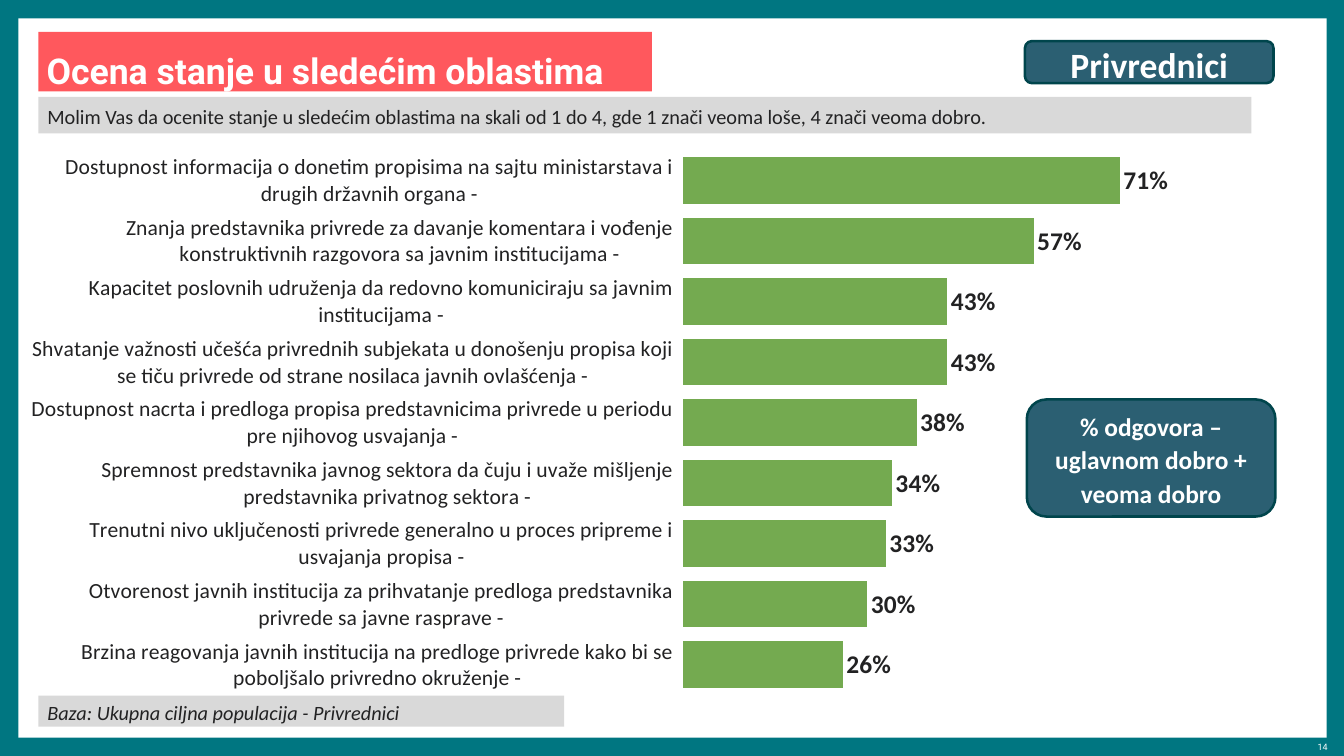
from dataclasses import dataclass

from lxml import etree
from pptx import Presentation
from pptx import util as u
from pptx.chart.data import CategoryChartData
from pptx.dml.color import RGBColor
from pptx.enum import chart as charts, shapes, text
from pptx.oxml.ns import qn


@dataclass(frozen=True)
class Theme:
    """Colours, fonts and type sizes of the slide."""
    teal: str = "007681"
    white: str = "FFFFFF"
    grey: str = "D9D9D9"
    coral: str = "FF585D"
    badge: str = "2B5F72"
    badge_line: str = "00454C"
    bar: str = "74AA50"
    ink: str = "222223"
    heading_font: str = "Roboto"
    body_font: str = "Calibri"
    heading: int = 28
    label: int = 20
    chart: int = 18
    category: int = 17
    note: int = 16
    number: int = 7


class SurveyPage:
    """Draws the elements of one survey slide."""

    def __init__(self, deck, theme):
        self.theme = theme
        self.page = deck.slides.add_slide(deck.slide_layouts[6])
        self.paint(self.page.background.fill, theme.teal)

    def paint(self, fill, colour):
        fill.solid()
        fill.fore_color.rgb = RGBColor.from_string(colour)

    def style(self, font, size, colour, name, bold=False, italic=False):
        font.size, font.name, font.bold, font.italic = u.Pt(size), name, bold, italic
        font.color.rgb = RGBColor.from_string(colour)

    def panel(self, place, colour, kind=shapes.MSO_SHAPE.RECTANGLE):
        box = self.page.shapes.add_shape(kind, *map(u.Pt, place))
        box.shadow.inherit = False
        self.paint(box.fill, colour)
        box.line.fill.background()
        return box

    def set_words(self, box, words, align, margins, spacing=1.1, gap=0):
        frame = box.text_frame
        frame.word_wrap = True
        frame.vertical_anchor = text.MSO_ANCHOR.MIDDLE
        frame.margin_left = frame.margin_right = u.Pt(margins[0])
        frame.margin_top, frame.margin_bottom = map(u.Pt, margins[1:])
        para = frame.paragraphs[0]
        para.text, para.alignment, para.line_spacing = words, align, spacing
        para.space_before = para.space_after = u.Pt(gap)
        return para.font

    def title(self, place, words):
        box = self.panel(place, self.theme.coral)
        font = self.set_words(box, words, text.PP_ALIGN.LEFT, (6.5, 5.8, 0), u.Pt(41))
        self.style(font, self.theme.heading, self.theme.white,
                   self.theme.heading_font, bold=True)

    def note(self, place, words, italic=False):
        box = self.panel(place, self.theme.grey)
        font = self.set_words(box, words, text.PP_ALIGN.LEFT, (7.2, 0, 0), gap=6)
        self.style(font, self.theme.note, self.theme.ink,
                   self.theme.body_font, italic=italic)

    def badge(self, place, words, size):
        box = self.panel(place, self.theme.badge, shapes.MSO_SHAPE.ROUNDED_RECTANGLE)
        self.paint(box.line.fill, self.theme.badge_line)
        box.line.width = u.Pt(2)
        font = self.set_words(box, words, text.PP_ALIGN.CENTER, (2.9, 2.9, 2.9))
        self.style(font, size, self.theme.white, self.theme.body_font, bold=True)

    def number(self, place, words):
        box = self.page.shapes.add_textbox(*map(u.Pt, place))
        font = self.set_words(box, words, text.PP_ALIGN.RIGHT, (0, 0, 0))
        self.style(font, self.theme.number, self.theme.white, self.theme.heading_font)

    def bars(self, place, scores, plot_place):
        theme = self.theme
        data = CategoryChartData()
        data.categories = list(scores)
        data.add_series("Series 1", list(scores.values()))
        chart = self.page.shapes.add_chart(
            charts.XL_CHART_TYPE.BAR_CLUSTERED, *map(u.Pt, place), data).chart
        chart.has_legend = chart.has_title = False
        self.style(chart.font, theme.chart, theme.ink, theme.heading_font)
        areas = chart.category_axis
        areas.format.line.fill.background()
        areas.has_major_gridlines = False
        self.style(areas.tick_labels.font, theme.category, theme.ink, theme.body_font)
        scale = chart.value_axis
        scale.minimum_scale, scale.maximum_scale, scale.major_unit = 0, 100, 10
        scale.has_major_gridlines = scale.visible = False
        plot = chart.plots[0]
        plot.gap_width, plot.overlap, plot.vary_by_categories = 30, 100, False
        self.paint(plot.series[0].format.fill, theme.bar)
        plot.has_data_labels = True
        labels = plot.data_labels
        labels.show_value = True
        labels.number_format, labels.number_format_is_linked = '#"%"', False
        labels.position = charts.XL_LABEL_POSITION.OUTSIDE_END
        self.style(labels.font, theme.label, theme.ink, theme.body_font, bold=True)
        self.fix_plot(chart, plot_place)

    def fix_plot(self, chart, plot_place):
        area = chart.element.find(".//" + qn("c:plotArea"))
        for old in area.findall(qn("c:layout")):
            area.remove(old)
        layout = etree.Element(qn("c:layout"))
        area.insert(0, layout)
        manual = etree.SubElement(layout, qn("c:manualLayout"))
        settings = [("layoutTarget", "inner"), ("xMode", "edge"), ("yMode", "edge")]
        for name, value in settings + list(zip("xywh", plot_place)):
            etree.SubElement(manual, qn("c:" + name)).set("val", str(value))


SCORES = {
    "Brzina reagovanja javnih institucija na predloge privrede kako bi se poboljšalo privredno okruženje -": 26,
    "Otvorenost javnih institucija za prihvatanje predloga predstavnika privrede sa javne rasprave -": 30,
    "Trenutni nivo uključenosti privrede generalno u proces pripreme i usvajanja propisa -": 33,
    "Spremnost predstavnika javnog sektora da čuju i uvaže mišljenje predstavnika privatnog sektora -": 34,
    "Dostupnost nacrta i predloga propisa predstavnicima privrede u periodu pre njihovog usvajanja -": 38,
    "Shvatanje važnosti učešća privrednih subjekata u donošenju propisa koji se tiču privrede "
    "od strane nosilaca javnih ovlašćenja -": 43,
    "Kapacitet poslovnih udruženja da redovno komuniciraju sa javnim institucijama -": 43,
    "Znanja predstavnika privrede za davanje komentara i vođenje konstruktivnih razgovora "
    "sa javnim institucijama -": 57,
    "Dostupnost informacija o donetim propisima na sajtu ministarstava i drugih državnih organa -": 71,
}


def main():
    deck = Presentation()
    deck.slide_width, deck.slide_height = u.Pt(1058.4), u.Pt(595.4)
    theme = Theme()
    survey = SurveyPage(deck, theme)
    survey.panel((14.4, 14.4, 1030.3, 566.6), theme.white)
    survey.number((988.6, 583.2, 56.9, 9.4), "14")
    survey.note((30.2, 547.9, 414, 24.5),
                "Baza: Ukupna ciljna populacija - Privrednici", italic=True)
    survey.bars((18.7, 110.9, 1003.7, 437), SCORES, (0.517, 0.017, 0.483, 0.982))
    survey.title((30.2, 25.2, 483.1, 46.8), "Ocena stanje u sledećim oblastima")
    survey.note((30.2, 76.3, 955.4, 28.8),
                "Molim Vas da ocenite stanje u sledećim oblastima na skali od 1 do 4, "
                "gde 1 znači veoma loše, 4 znači veoma dobro.")
    survey.badge((807.1, 32.4, 195.8, 33.1), "Privrednici", theme.heading)
    survey.badge((808.6, 314.6, 195.8, 92.2),
                 "% odgovora – uglavnom dobro + veoma dobro", theme.label)
    deck.save("out.pptx")


if __name__ == "__main__":
    main()
